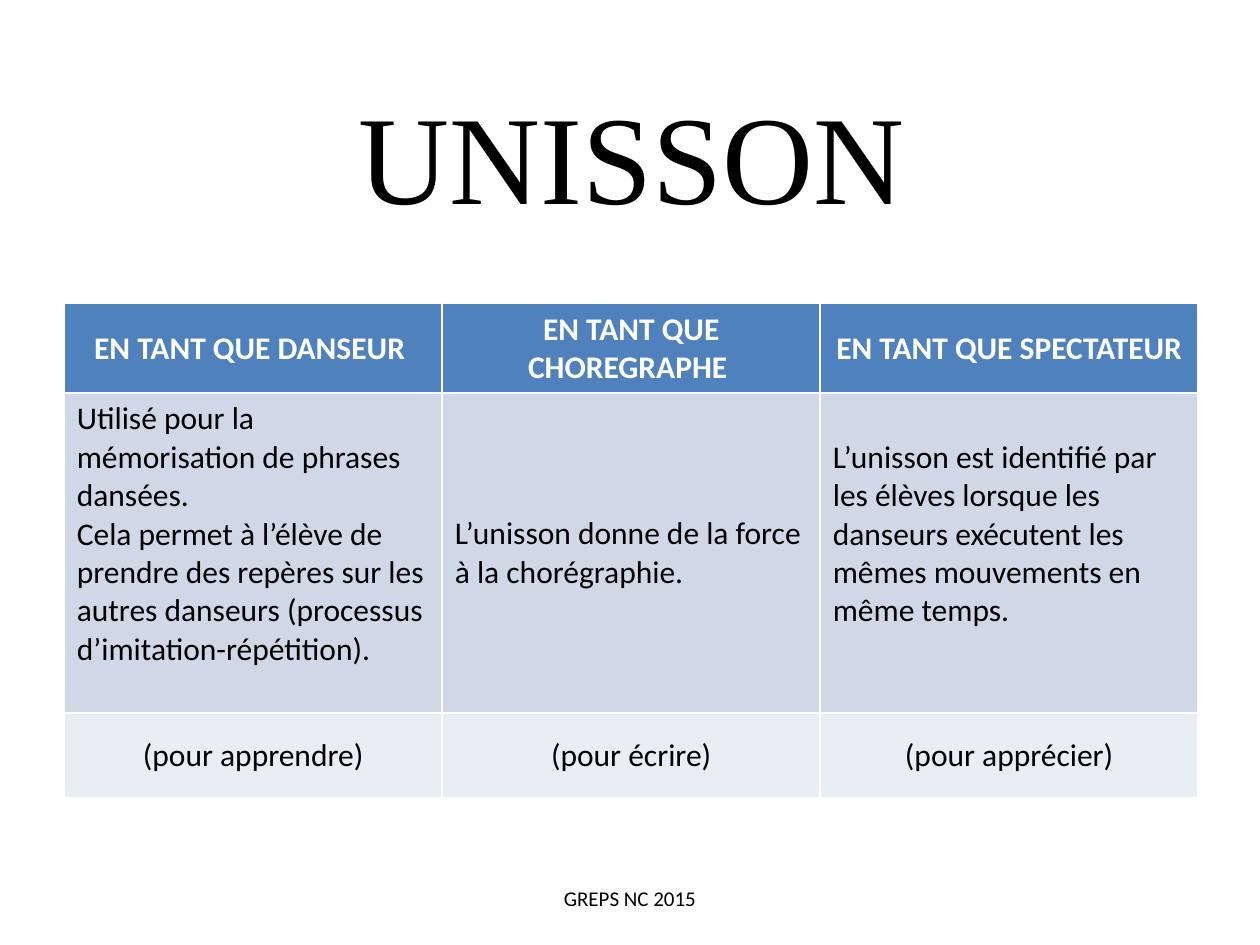
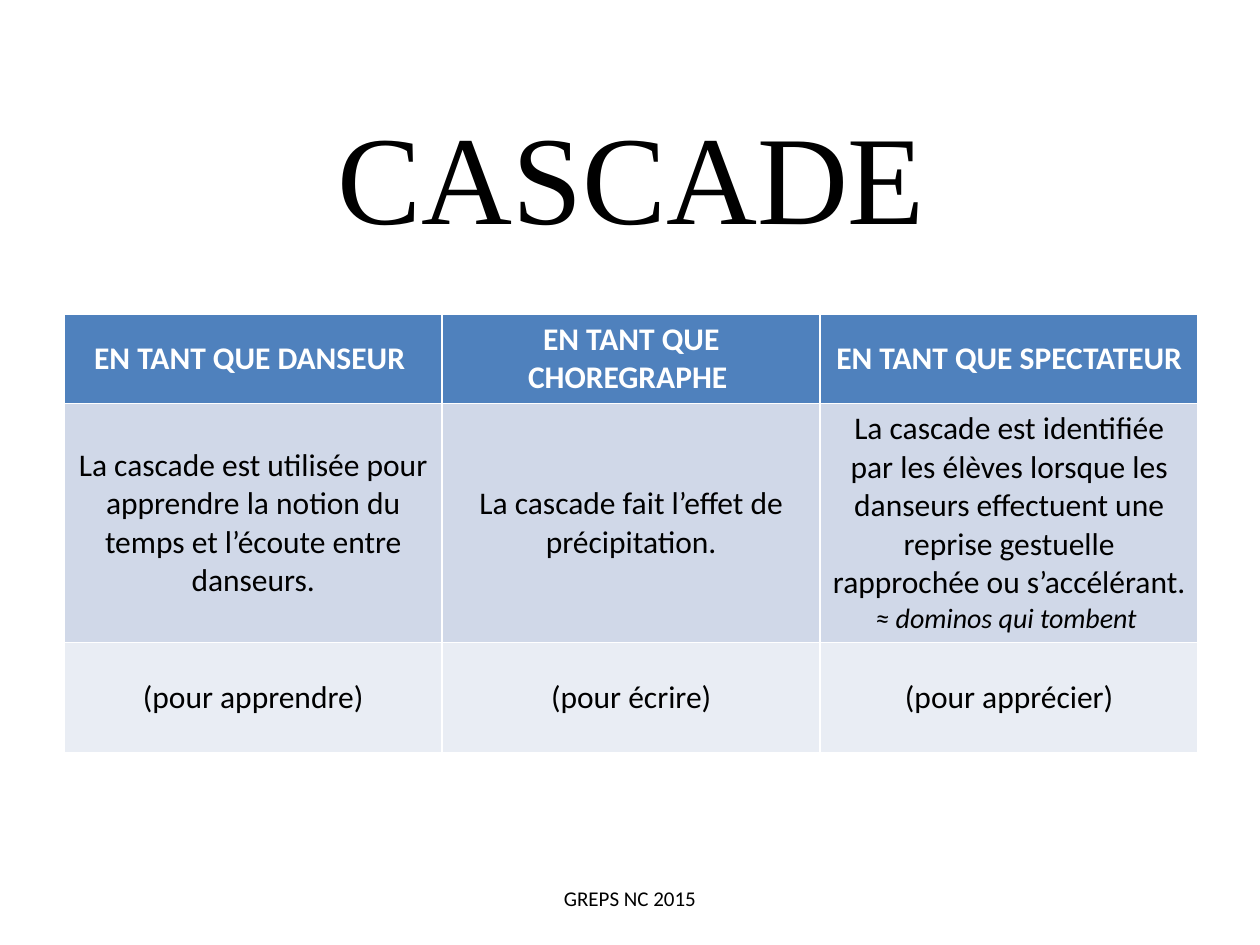
from pptx import Presentation, util as u
from pptx.dml.color import RGBColor
from pptx.enum import text

BLACK, WHITE = "000000", "FFFFFF"
BANDS = ["4F81BD", "D0D8E8", "E9EDF4"]
BODY, SERIF = "Calibri", "Times New Roman"
LEFT, WIDTH = 0.51, 9
LINE = 0.3  # height of one line of table text
HEAD = ["EN TANT QUE DANSEUR ", "EN TANT QUE CHOREGRAPHE ",
        "EN TANT QUE SPECTATEUR "]
AIMS = ["(pour apprendre)", "(pour écrire)", "(pour apprécier)"]


def paint(color):
    return RGBColor.from_string(color)


def box(left, top, width, height):
    return [u.Inches(n) for n in (left, top, width, height)]


def write(para, words, size=18, font=BODY, color=BLACK, bold=False,
          italic=False, center=True):
    para.alignment = text.PP_ALIGN.CENTER if center else text.PP_ALIGN.LEFT
    run = para.add_run()
    run.text = words
    face = run.font
    face.name, face.size = font, u.Pt(size)
    face.bold, face.italic = bold, italic
    face.color.rgb = paint(color)


def add_title(slide, words, top):
    title = slide.shapes.title
    title.left, title.top, title.width, title.height = box(LEFT, top, WIDTH, 1.25)
    frame = title.text_frame
    frame.auto_size = text.MSO_AUTO_SIZE.NONE
    frame.vertical_anchor = text.MSO_ANCHOR.MIDDLE
    write(frame.paragraphs[0], words, size=72, font=SERIF)


def fill_cell(cell, lines, fill, lift=0, **style):
    """Write lines, each a string or a (string, format) pair; lift raises them."""
    cell.fill.solid()
    cell.fill.fore_color.rgb = paint(fill)
    cell.vertical_anchor = text.MSO_ANCHOR.MIDDLE
    cell.margin_bottom = u.Inches(0.05 + lift)
    frame = cell.text_frame
    for i, line in enumerate(lines):
        words, extra = (line, {}) if isinstance(line, str) else line
        para = frame.add_paragraph() if i else frame.paragraphs[0]
        write(para, words, **{**style, **extra})


def add_roles(slide, top, heights, roles, lifts, center):
    """Add the table of the three roles: heading, use, aim."""
    frame = slide.shapes.add_table(3, 3, *box(LEFT, top, WIDTH, sum(heights)))
    table = frame.table
    for row, height in zip(table.rows, heights):
        row.height = u.Inches(height)
    for col in range(3):
        fill_cell(table.cell(0, col), [HEAD[col]], BANDS[0], color=WHITE, bold=True)
        fill_cell(table.cell(1, col), roles[col], BANDS[1], lifts[col], center=center)
        fill_cell(table.cell(2, col), [AIMS[col]], BANDS[2])


def add_footer(slide):
    note = slide.shapes.add_textbox(*box(4.37, 6.98, 1.26, 0.3))
    frame = note.text_frame
    frame.word_wrap = False
    frame.auto_size = text.MSO_AUTO_SIZE.SHAPE_TO_FIT_TEXT
    write(frame.paragraphs[0], "GREPS NC 2015", size=12)


def add_page(deck, name, title_top, table_top, heights, roles,
             lifts=(0, 0, 0), center=True):
    slide = deck.slides.add_slide(deck.slide_layouts[5])
    add_title(slide, name, title_top)
    add_roles(slide, table_top, heights, roles, lifts, center)
    add_footer(slide)


def main():
    deck = Presentation()
    deck.slide_width, deck.slide_height = u.Inches(10), u.Inches(7.5)
    add_page(deck, "UNISSON", 0.6, 2.41, [0.7, 2.54, 0.67], [
        ["Utilisé pour la mémorisation de phrases dansées.",
         "Cela permet à l’élève de prendre des repères sur les autres danseurs "
         "(processus d’imitation-répétition)."],
        ["L’unisson donne de la force à la chorégraphie."],
        ["L’unisson est identifié par les élèves lorsque les danseurs "
         "exécutent les mêmes mouvements en même temps."],
    ], lifts=(LINE, 0, LINE), center=False)
    add_page(deck, "CASCADE", 0.76, 2.49, [0.7, 1.9, 0.87], [
        ["La cascade est utilisée pour apprendre la notion du temps "
         "et l’écoute entre danseurs."],
        ["La cascade fait l’effet de précipitation."],
        ["La cascade est identifiée par les élèves lorsque les danseurs "
         "effectuent une reprise gestuelle rapprochée ou s’accélérant.",
         ("≈ dominos qui tombent ", {"size": 16, "italic": True})],
    ])
    deck.save("out.pptx")


if __name__ == "__main__":
    main()
